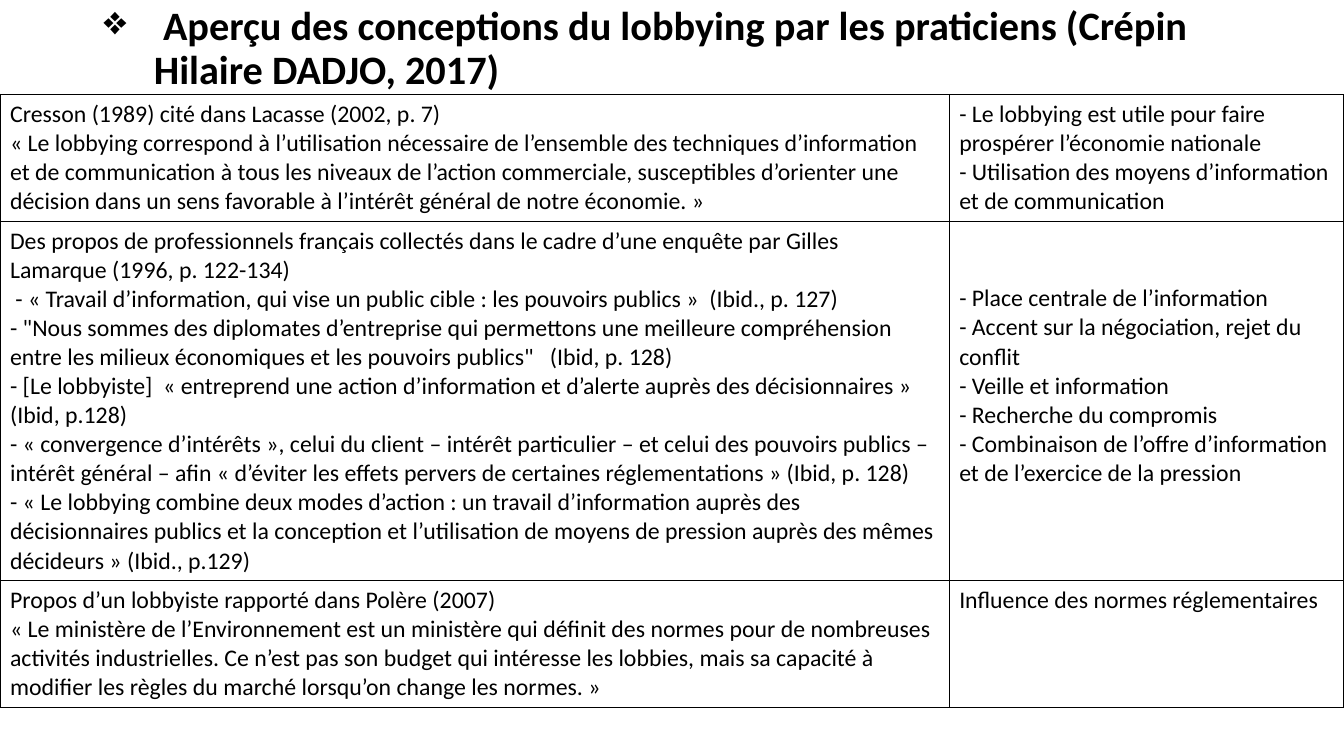
from lxml.etree import SubElement
from pptx import Presentation
from pptx.dml.color import RGBColor
from pptx.enum.text import MSO_ANCHOR, MSO_AUTO_SIZE, PP_ALIGN
from pptx.oxml import parse_xml
from pptx.oxml.ns import nsdecls, qn
from pptx.util import Emu, Pt

PX = 9525  # 96 px to the inch
COLORS = {"ink": "000000", "paper": "FFFFFF"}
FONT = "Calibri"
COLUMN_WIDTHS = [904, 376]
ROW_HEIGHTS = [120, 342, 121]
MARGIN_TOP = 5
TWO_LINES = 55

ROWS = [
    [
        [
            "Cresson (1989) cité dans Lacasse (2002, p. 7)",
            "« Le lobbying correspond à l’utilisation nécessaire de l’ensemble des techniques d’information et de communication à tous les niveaux de l’action commerciale, susceptibles d’orienter une décision dans un sens favorable à l’intérêt général de notre économie. »",
        ],
        [
            "- Le lobbying est utile pour faire prospérer l’économie nationale",
            "- Utilisation des moyens d’information et de communication",
        ],
    ],
    [
        [
            "Des propos de professionnels français collectés dans le cadre d’une enquête par Gilles Lamarque (1996, p. 122-134)",
            " - « Travail d’information, qui vise un public cible : les pouvoirs publics »  (Ibid., p. 127)",
            "- \"Nous sommes des diplomates d’entreprise qui permettons une meilleure compréhension entre les milieux économiques et les pouvoirs publics\"   (Ibid, p. 128)",
            "- [Le lobbyiste]  « entreprend une action d’information et d’alerte auprès des décisionnaires » (Ibid, p.128)",
            "- « convergence d’intérêts », celui du client – intérêt particulier – et celui des pouvoirs publics – intérêt général – afin « d’éviter les effets pervers de certaines réglementations » (Ibid, p. 128)",
            "- « Le lobbying combine deux modes d’action : un travail d’information auprès des décisionnaires publics et la conception et l’utilisation de moyens de pression auprès des mêmes décideurs » (Ibid., p.129)",
        ],
        [
            "- Place centrale de l’information",
            "- Accent sur la négociation, rejet du conflit",
            "- Veille et information",
            "- Recherche du compromis",
            "- Combinaison de l’offre d’information et de l’exercice de la pression",
        ],
    ],
    [
        [
            "Propos d’un lobbyiste rapporté dans Polère (2007)",
            "« Le ministère de l’Environnement est un ministère qui définit des normes pour de nombreuses activités industrielles. Ce n’est pas son budget qui intéresse les lobbies, mais sa capacité à modifier les règles du marché lorsqu’on change les normes. »",
        ],
        ["Influence des normes réglementaires"],
    ],
]


def style_font(font, size, bold=False):
    font.name = FONT
    font.size = Pt(size)
    font.bold = bold
    font.color.rgb = RGBColor.from_string(COLORS["ink"])


def add_borders(cell):
    cell_properties = cell._tc.get_or_add_tcPr()
    for index, side in enumerate(("lnL", "lnR", "lnT", "lnB")):
        cell_properties.insert(index, parse_xml(
            f'<a:{side} {nsdecls("a")} w="12700"><a:solidFill>'
            f'<a:srgbClr val="{COLORS["ink"]}"/></a:solidFill></a:{side}>'))


deck = Presentation()
deck.slide_width, deck.slide_height = Emu(1280 * PX), Emu(720 * PX)
slide = deck.slides.add_slide(deck.slide_layouts[5])

# Definitions and what they imply
frame = slide.shapes.add_table(
    len(ROWS), len(COLUMN_WIDTHS), 0, Emu(90 * PX),
    Emu(sum(COLUMN_WIDTHS) * PX), Emu(sum(ROW_HEIGHTS) * PX))
definitions = frame.table
definitions.first_row = False
definitions.horz_banding = False
for column, width in zip(definitions.columns, COLUMN_WIDTHS):
    column.width = Emu(width * PX)
for row, height, contents in zip(definitions.rows, ROW_HEIGHTS, ROWS):
    row.height = Emu(height * PX)
    for cell, lines in zip(row.cells, contents):
        cell.margin_top = Emu(MARGIN_TOP * PX)
        cell.fill.solid()
        cell.fill.fore_color.rgb = RGBColor.from_string(COLORS["paper"])
        add_borders(cell)
        cell.text = "\n".join(lines)
        for paragraph in cell.text_frame.paragraphs:
            style_font(paragraph.font, 17)
# The practitioners' themes start level with the first quotation
definitions.cell(1, 1).margin_top = Emu((MARGIN_TOP + TWO_LINES) * PX)

# Title with its diamond bullet
title = slide.shapes.title
title.left, title.top, title.width, title.height = (
    Emu(length * PX) for length in (89, 12, 1104, 70))
title.text_frame.auto_size = MSO_AUTO_SIZE.NONE
title.text_frame.vertical_anchor = MSO_ANCHOR.MIDDLE
title.text_frame.text = " Aperçu des conceptions du lobbying par les praticiens (Crépin Hilaire DADJO, 2017)"
heading = title.text_frame.paragraphs[0]
heading.alignment = PP_ALIGN.LEFT
heading.line_spacing = 0.9
style_font(heading.font, 28.8, bold=True)
heading_properties = heading._p.get_or_add_pPr()
heading_properties.set("marL", str(48 * PX))
heading_properties.set("indent", str(-48 * PX))
bullet = SubElement(heading_properties, qn("a:buChar"), char="❖")
heading_properties.find(qn("a:defRPr")).addprevious(bullet)

deck.save("out.pptx")
